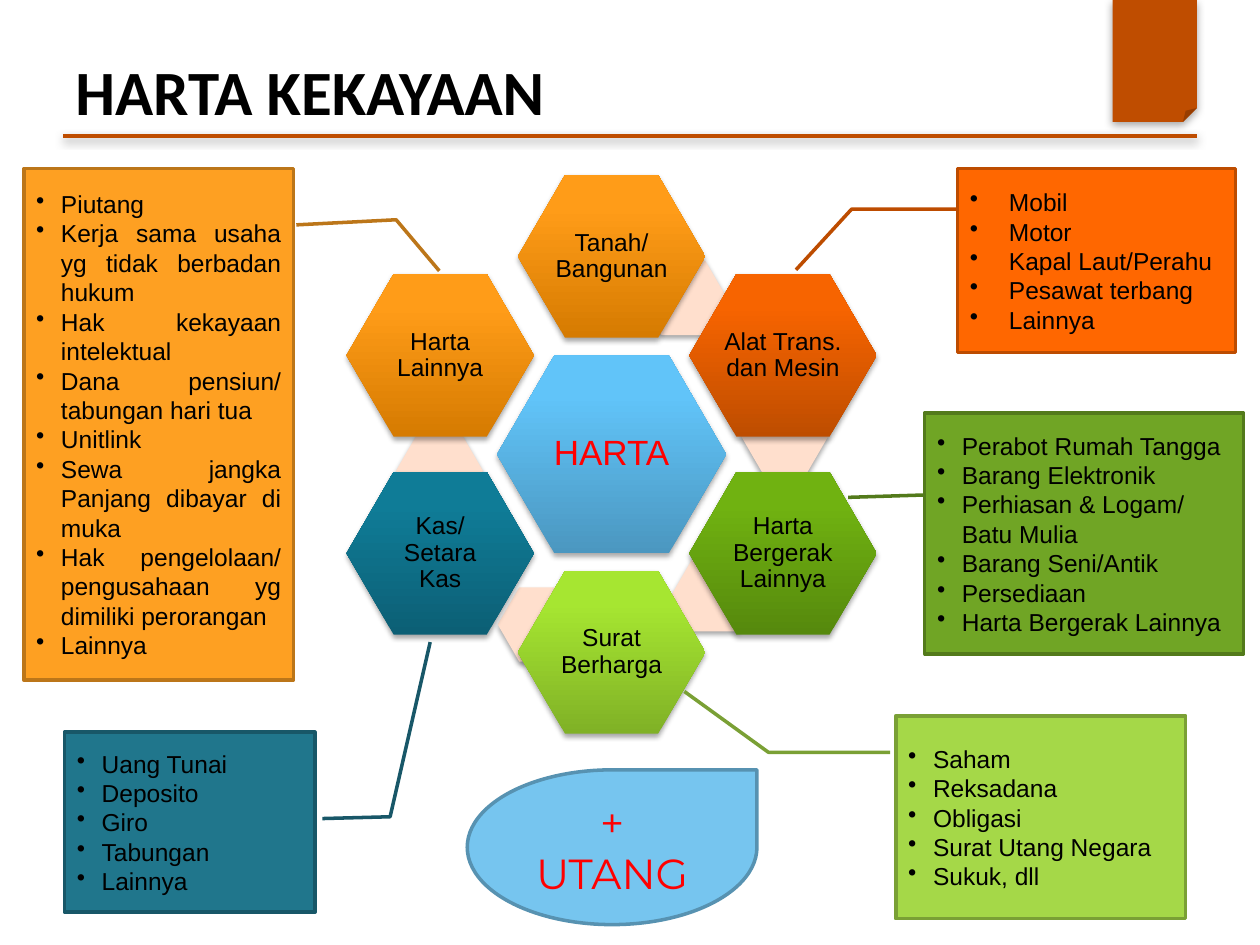
from math import cos, radians, sin

from lxml.etree import SubElement
from pptx import Presentation
from pptx.dml.color import RGBColor
from pptx.enum.shapes import MSO_CONNECTOR, MSO_SHAPE
from pptx.enum.text import MSO_ANCHOR, PP_ALIGN
from pptx.oxml.ns import qn
from pptx.util import Cm, Pt

BLACK = RGBColor(0x00, 0x00, 0x00)
RED = RGBColor(0xFF, 0x00, 0x00)
RUST = RGBColor(0xBF, 0x4D, 0x00)
PEACH = RGBColor(0xFF, 0xDF, 0xCD)
SKY, SKY_EDGE = RGBColor(0x76, 0xC5, 0xEF), RGBColor(0x57, 0x92, 0xB1)
TEAL, TEAL_EDGE = RGBColor(0x20, 0x76, 0x8C), RGBColor(0x18, 0x57, 0x68)
ORANGE, ORANGE_EDGE = RGBColor(0xFF, 0x67, 0x00), RGBColor(0xBD, 0x4C, 0x00)
GREEN, GREEN_EDGE = RGBColor(0x70, 0xA5, 0x25), RGBColor(0x53, 0x7A, 0x1B)
LIME, LIME_EDGE = RGBColor(0xA5, 0xD8, 0x48), RGBColor(0x7A, 0xA0, 0x35)
AMBER, AMBER_EDGE = RGBColor(0xFE, 0xA0, 0x22), RGBColor(0xBC, 0x76, 0x19)

BLUE_GRAD = RGBColor(0x4B, 0x97, 0xC0), RGBColor(0x61, 0xC4, 0xF9)
AMBER_GRAD = RGBColor(0xD6, 0x7B, 0x01), RGBColor(0xFF, 0x9C, 0x18)
RUST_GRAD = RGBColor(0xBE, 0x4D, 0x00), RGBColor(0xF7, 0x64, 0x00)
GREEN_GRAD = RGBColor(0x56, 0x89, 0x0D), RGBColor(0x70, 0xB2, 0x11)
LIME_GRAD = RGBColor(0x80, 0xB1, 0x26), RGBColor(0xA6, 0xE6, 0x31)
TEAL_GRAD = RGBColor(0x0C, 0x5F, 0x75), RGBColor(0x0F, 0x7C, 0x97)

CENTRE_X, CENTRE_Y, RADIUS = 12.33, 9.16, 3.99
HEX_W, HEX_H = 3.78, 3.28
RING = [
    ("Tanah/ Bangunan", AMBER_GRAD, (12.9, 5.26)),
    ("Alat Trans. dan Mesin", RUST_GRAD, (14.94, 8.05)),
    ("Harta Bergerak Lainnya", GREEN_GRAD, (13.54, 11.23)),
    ("Surat Berharga", LIME_GRAD, (10.03, 11.84)),
    ("Kas/ Setara Kas", TEAL_GRAD, (7.98, 8.74)),
    ("Harta Lainnya", AMBER_GRAD, None),
]
CALLOUTS = [
    ((1.3, 14.76, 5.05, 3.63), TEAL, TEAL_EDGE, (0.48, 1.03, 0.47, 1.3, -0.5, 1.46),
     ["Uang Tunai", "Deposito", "Giro", "Tabungan", "Lainnya"], {}),
    ((19.3, 3.4, 5.61, 3.71), ORANGE, ORANGE_EDGE, (0.22, 0, 0.22, -0.38, 0.55, -0.58),
     ["Mobil", "Motor", "Kapal Laut/Perahu", "Pesawat terbang", "Lainnya"], {"indent": 0.79}),
    ((18.64, 8.33, 6.43, 4.85), GREEN, GREEN_EDGE, (0.34, 0, 0.35, -0.24),
     ["Perabot Rumah Tangga", "Barang Elektronik", "Perhiasan & Logam/ Batu Mulia",
      "Barang Seni/Antik", "Persediaan", "Harta Bergerak Lainnya"], {"align": PP_ALIGN.LEFT}),
    ((18.06, 14.43, 5.84, 4.09), LIME, LIME_EDGE, (0.18, -0.02, 0.18, -0.44, -0.12, -0.73),
     ["Saham", "Reksadana", "Obligasi", "Surat Utang Negara", "Sukuk, dll"], {}),
    ((0.48, 3.4, 5.44, 10.31), AMBER, AMBER_EDGE, (0.11, 1.01, 0.1, 1.38, 0.2, 1.54),
     ["Piutang", "Kerja sama usaha yg tidak berbadan hukum", "Hak kekayaan intelektual",
      "Dana pensiun/ tabungan hari tua", "Unitlink", "Sewa jangka Panjang dibayar di muka",
      "Hak pengelolaan/ pengusahaan yg dimiliki perorangan", "Lainnya"], {}),
]


class SlideBuilder:
    """Holds the text style and the current slide, and adds each kind of element."""

    font = {"name": "Arial", "size": Pt(14), "bold": False}

    def __init__(self, s):
        self.s = s

    def apply(self, target, values):
        for name, value in values.items():
            setattr(target, name, value)

    def apply_xml(self, element, values):
        for name, value in values.items():
            element.set(name, str(int(value)))

    def add_text(self, tf, lines, align, color=BLACK, indent=0, spacing=1.0, inset=None, **font):
        self.apply(tf, {"word_wrap": True, "vertical_anchor": MSO_ANCHOR.MIDDLE})
        if inset is not None:
            sides = ("margin_left", "margin_right", "margin_top", "margin_bottom")
            self.apply(tf, dict.fromkeys(sides, Cm(inset)))
        for i, line in enumerate(lines):
            p = tf.add_paragraph() if i else tf.paragraphs[0]
            self.apply(p, {"alignment": align, "line_spacing": spacing})
            if indent:
                pPr = p._p.get_or_add_pPr()
                self.apply_xml(pPr, {"marL": Cm(indent), "indent": -Cm(indent)})
                SubElement(pPr, qn("a:buChar"), char="•")
            r = p.add_run()
            r.text = line
            self.apply(r.font, {**self.font, **font})
            r.font.color.rgb = color

    def shade(self, sp, blur, alpha=35):
        spPr = sp._element.spPr
        effects = spPr.find(qn("a:effectLst"))
        if effects is None:
            effects = SubElement(spPr, qn("a:effectLst"))
        shadow = SubElement(effects, qn("a:outerShdw"), rotWithShape="0")
        self.apply_xml(shadow, {"blurRad": Pt(blur), "dist": Pt(1.8), "dir": 5400000})
        black = SubElement(shadow, qn("a:srgbClr"), val="000000")
        SubElement(black, qn("a:alpha"), val=str(alpha * 1000))

    def shape(self, kind, box, fill, edge=None, adjustments=()):
        sp = self.s.shapes.add_shape(kind, *map(Cm, box))
        sp.shadow.inherit = False
        if isinstance(fill, RGBColor):
            sp.fill.solid()
            sp.fill.fore_color.rgb = fill
        else:
            sp.fill.gradient()
            sp.fill.gradient_angle = 90
            for stop, color, position in zip(sp.fill.gradient_stops, fill, (0, 0.8)):
                stop.color.rgb = color
                stop.position = position
        if edge is None:
            sp.line.fill.background()
        else:
            sp.line.color.rgb = edge
            sp.line.width = Pt(2)
        for i, value in enumerate(adjustments):
            sp.adjustments[i] = value
        return sp

    def hexagon(self, x, y, w, h, fill, text=None, **style):
        box = (x - w / 2, y - h / 2, w, h)
        sp = self.shape(MSO_SHAPE.HEXAGON, box, fill, adjustments=(0.29,))
        self.shade(sp, 3.1)
        if text:
            self.add_text(sp.text_frame, [text], PP_ALIGN.CENTER, spacing=0.9, inset=0.05, **style)

    def callout(self, box, fill, edge, pointer, items, align=PP_ALIGN.JUSTIFY, indent=0.5):
        kind = MSO_SHAPE.LINE_CALLOUT_2 if len(pointer) == 6 else MSO_SHAPE.LINE_CALLOUT_1
        sp = self.shape(kind, box, fill, edge, pointer)
        self.add_text(sp.text_frame, items, align, indent=indent)

    def rule(self, x1, x2, y):
        c = self.s.shapes.add_connector(MSO_CONNECTOR.STRAIGHT, Cm(x1), Cm(y), Cm(x2), Cm(y))
        c.line.color.rgb = RUST
        c.line.width = Pt(2)
        self.shade(c, 5, 38)

    def title(self, box, text):
        tb = self.s.shapes.add_textbox(*map(Cm, box))
        self.add_text(tb.text_frame, [text], PP_ALIGN.LEFT, name="Calibri", size=Pt(36), bold=True)


def main():
    prs = Presentation()
    prs.slide_width, prs.slide_height = Cm(25.4), Cm(19.05)
    b = SlideBuilder(prs.slides.add_slide(prs.slide_layouts[6]))

    b.shade(b.shape(MSO_SHAPE.FOLDED_CORNER, (22.43, 0, 1.7, 2.46), RUST), 5)
    b.rule(1.27, 24.13, 2.74)
    b.hexagon(CENTRE_X, CENTRE_Y, 4.62, 3.99, BLUE_GRAD, "HARTA", size=Pt(20), color=RED)
    for i, (text, fill, link) in enumerate(RING):
        if link:
            b.hexagon(link[0] + 0.88, link[1] + 0.75, 1.75, 1.5, PEACH)
        angle = radians(60 * i)
        x, y = CENTRE_X + RADIUS * sin(angle), CENTRE_Y - RADIUS * cos(angle)
        b.hexagon(x, y, HEX_W, HEX_H, fill, text)

    b.title((1.27, 0.76, 22.86, 2.11), "HARTA KEKAYAAN")
    for *parts, options in CALLOUTS:
        b.callout(*parts, **options)
    debt = b.shape(MSO_SHAPE.TEAR, (9.42, 15.52, 5.84, 3.12), SKY, SKY_EDGE)
    b.add_text(debt.text_frame, ["+ UTANG"], PP_ALIGN.CENTER, RED, name="Montserrat", size=Pt(24))
    prs.save("out.pptx")


if __name__ == "__main__":
    main()
